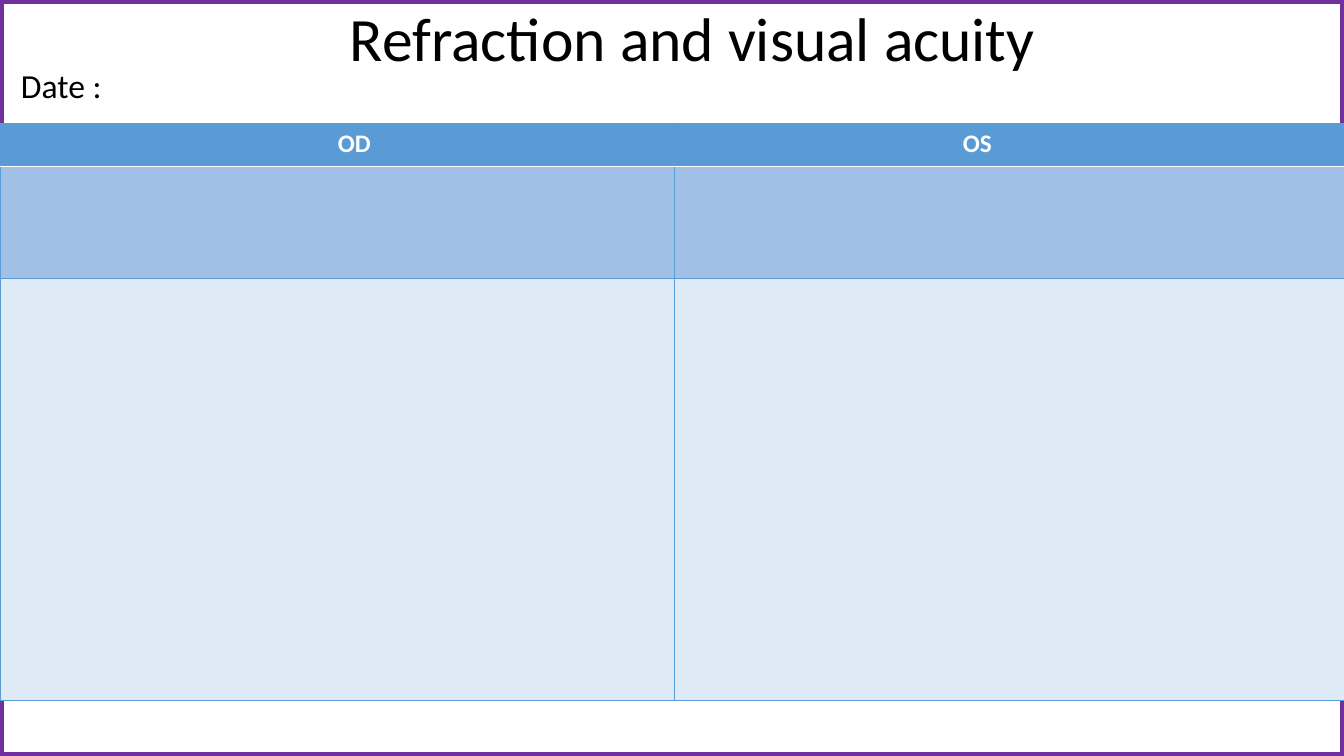
from lxml import etree
from pptx import Presentation
from pptx.dml.color import RGBColor
from pptx.enum.shapes import MSO_SHAPE
from pptx.enum.text import MSO_ANCHOR, MSO_AUTO_SIZE, PP_ALIGN
from pptx.oxml.ns import qn
from pptx.util import Inches, Pt

RECTANGLE = MSO_SHAPE.RECTANGLE
TOP = MSO_ANCHOR.TOP
NO_AUTOFIT = MSO_AUTO_SIZE.NONE
LEFT = PP_ALIGN.LEFT

TITLE_ONLY = 5
WIDTH, HEIGHT = 13.33, 7.5
FONT = "Calibri"
PURPLE, BLUE, WHITE, BLACK = "7030A0", "5B9BD5", "FFFFFF", "000000"
COLUMN_WIDTH = 6.69
ROW_HEIGHTS = (0.43, 1.11, 4.19)
ROW_FILLS = (BLUE, "A0C1E5", "DEEBF7")
EYES = (("OD", 3.35), ("OS", 2.86))


def color(value):
    return RGBColor.from_string(value)


def place(shape, box):
    shape.left, shape.top, shape.width, shape.height = map(Inches, box)


def write(text_frame, text, size, text_color, bold=False):
    text_frame.text = text
    paragraph = text_frame.paragraphs[0]
    paragraph.alignment = LEFT
    font = paragraph.runs[0].font
    font.name, font.size, font.bold = FONT, Pt(size), bold
    font.color.rgb = color(text_color)


def add_frame(slide, box):
    frame = slide.shapes.add_shape(RECTANGLE, *map(Inches, box))
    frame.shadow.inherit = False
    frame.fill.background()
    frame.line.color.rgb = color(PURPLE)
    frame.line.width = Pt(6)


def fill_heading(shape, box, text, size):
    place(shape, box)
    text_frame = shape.text_frame
    text_frame.word_wrap = True
    text_frame.auto_size = NO_AUTOFIT
    text_frame.vertical_anchor = TOP
    write(text_frame, text, size, BLACK)


def set_border(cell, side, line_color, points):
    properties = cell._tc.get_or_add_tcPr()
    line = etree.Element(qn(f"a:ln{side}"), w=str(Pt(points)))
    fill = etree.SubElement(line, qn("a:solidFill"))
    etree.SubElement(fill, qn("a:srgbClr"), val=line_color)
    position = len(properties.findall("*")) - 1
    properties.insert(position, line)


def format_cell(cell, row, column):
    cell.fill.solid()
    cell.fill.fore_color.rgb = color(ROW_FILLS[row])
    is_header = row == 0
    for side in "LRTB":
        touches_header = (is_header and side == "B") or (row == 1 and side == "T")
        line_color, points = (WHITE, 1) if touches_header else (BLUE, 0.5)
        set_border(cell, side, line_color, points)
    if is_header:
        eye, indent = EYES[column]
        cell.margin_left = Inches(indent)
        write(cell.text_frame, eye, 18, WHITE, bold=True)


def add_eye_table(slide, left, top):
    box = (left, top, COLUMN_WIDTH * len(EYES), sum(ROW_HEIGHTS))
    frame = slide.shapes.add_table(len(ROW_HEIGHTS), len(EYES), *map(Inches, box))
    table = frame.table
    for column in table.columns:
        column.width = Inches(COLUMN_WIDTH)
    for row, height in enumerate(ROW_HEIGHTS):
        table.rows[row].height = Inches(height)
        for column in range(len(EYES)):
            format_cell(table.cell(row, column), row, column)


def build_refraction_slide(presentation):
    slide = presentation.slides.add_slide(presentation.slide_layouts[TITLE_ONLY])
    add_frame(slide, (0, 0, WIDTH, HEIGHT))
    add_eye_table(slide, 0, 1.22)
    fill_heading(slide.shapes.title, (3.37, -0.05, 7.99, 0.84),
                 "Refraction and visual acuity", 44)
    date_box = (0.11, 0.59, 1.87, 0.5)
    date = slide.shapes.add_textbox(*map(Inches, date_box))
    fill_heading(date, date_box, "Date :", 24)


def main():
    presentation = Presentation()
    presentation.slide_width = Inches(WIDTH)
    presentation.slide_height = Inches(HEIGHT)
    build_refraction_slide(presentation)
    presentation.save("out.pptx")


if __name__ == "__main__":
    main()
